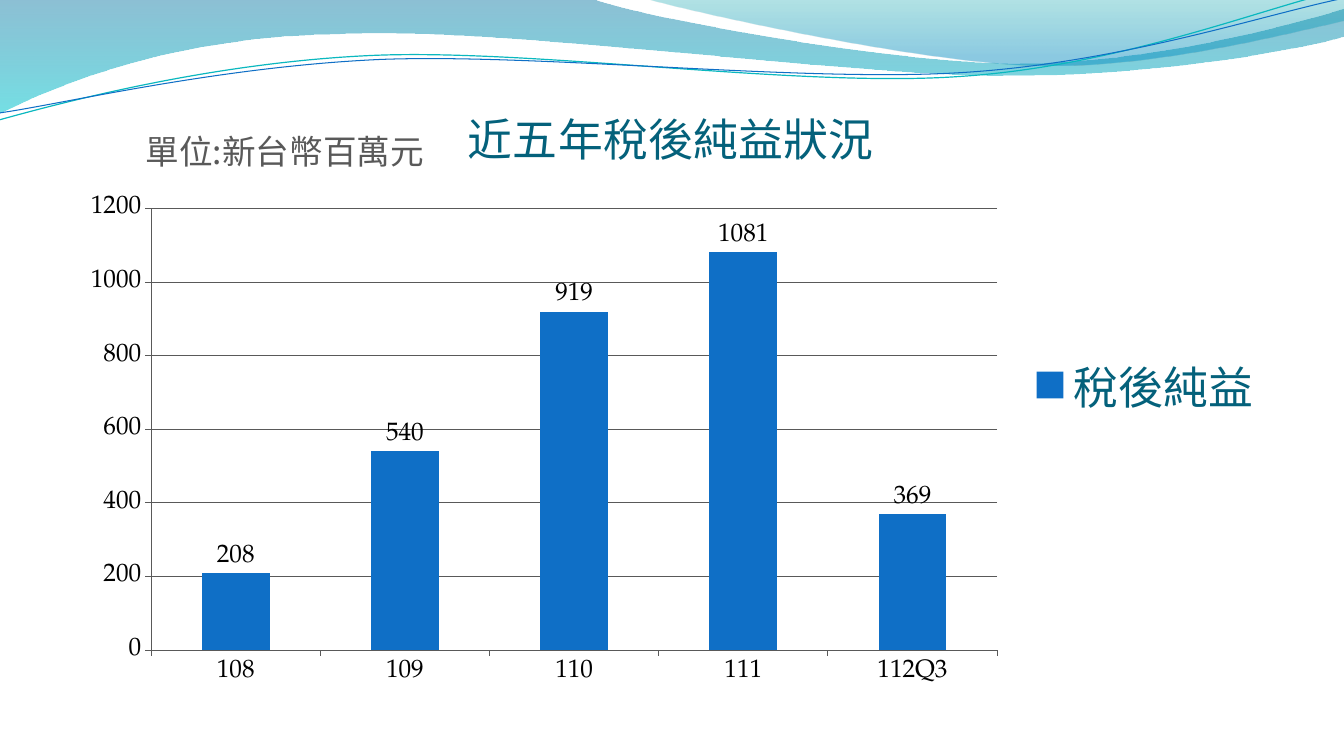
from lxml import etree
from pptx import Presentation
from pptx.chart.data import CategoryChartData
from pptx.dml.color import RGBColor
from pptx.enum.chart import (XL_CHART_TYPE, XL_LABEL_POSITION,
                             XL_LEGEND_POSITION, XL_TICK_MARK)
from pptx.enum.text import MSO_ANCHOR, PP_ALIGN
from pptx.oxml import parse_xml
from pptx.oxml.ns import nsdecls, qn
from pptx.util import Pt

COLUMN = XL_CHART_TYPE.COLUMN_CLUSTERED
ABOVE = XL_LABEL_POSITION.OUTSIDE_END
RIGHT = XL_LEGEND_POSITION.RIGHT
OUT = XL_TICK_MARK.OUTSIDE
CENTER = PP_ALIGN.CENTER
MIDDLE = MSO_ANCHOR.MIDDLE

SCALE = 9144  # 100 px to the inch
WIDE, HIGH = 1200, 619  # chart size in px

BLUE = RGBColor(0x0F, 0x6F, 0xC6)
AQUA = RGBColor(0x0A, 0xB8, 0xBF)
TEAL = RGBColor(0x04, 0x61, 0x7B)
GRAY = RGBColor(0x59, 0x59, 0x59)
BLACK = RGBColor(0, 0, 0)
DEEP = RGBColor(0x00, 0x74, 0xA1)
CYAN = RGBColor(0x00, 0xC6, 0xCF)
SEA = RGBColor(0x00, 0xA1, 0xA9)
SKY = RGBColor(0x00, 0x8B, 0xBF)

HAN = "Noto Sans CJK SC"
SERIF = "TeX Gyre Pagella"

# Each wave is a start point, then segments: one point for a line, three for a curve
WAVE = [(0, 0), [(587, -1)],
        [(634, 17), (885, 63), (1011, 63)], [(1138, 63), (1278, 26), (1333, 9)],
        [(1335, 36)],
        [(1311, 44), (1160, 76), (994, 75)], [(829, 75), (509, 28), (343, 34)],
        [(172, 36), (61, 83), (-1, 113)]]
CREST = [(639, -1), [(679, 11), (909, 62), (1025, 65)],
         [(1141, 69), (1282, 32), (1333, 21)], [(1333, 0)]]
UPPER = [(-1, 119), [(64, 101), (211, 62), (369, 55)],
         [(527, 48), (790, 87), (950, 76)], [(1110, 66), (1252, 8), (1331, -10)]]
LOWER = [(0, 112), [(63, 103), (218, 66), (378, 59)],
         [(537, 53), (796, 82), (955, 72)], [(1115, 62), (1255, 14), (1334, -2)]]

PROFIT = {"108": 208, "109": 540, "110": 919, "111": 1081, "112Q3": 369}


def px(n):
    return n * SCALE


def add_free(slide, wave, close):
    """Draw the points as lines, then join each three into a curve."""
    start, *segs = wave
    form = slide.shapes.build_freeform(*start, scale=SCALE)
    form.add_line_segments([dot for seg in segs for dot in seg], close=close)
    shape = form.convert_to_shape()
    shape.shadow.inherit = False
    lines = iter(list(shape._element.iter(qn("a:lnTo"))))
    for seg in segs:
        group = [next(lines) for _ in seg]
        if len(group) == 3:
            curve = etree.Element(qn("a:cubicBezTo"))
            group[0].addprevious(curve)
            for line in group:
                curve.append(line[0])
                line.getparent().remove(line)
    return shape


def add_wave(slide, wave, stops):
    """A closed shape with a see-through gradient from top to bottom."""
    shape = add_free(slide, wave, True)
    shape.line.fill.background()
    shape.fill.gradient()
    shape.fill.gradient_angle = 270
    for stop, (pos, color, _) in zip(shape.fill.gradient_stops, stops):
        stop.position = pos
        stop.color.rgb = color
    tints = shape._element.spPr.iter(qn("a:srgbClr"))
    for tint, (_, _, alpha) in zip(tints, stops):
        etree.SubElement(tint, qn("a:alpha"), val=str(alpha * 1000))


def add_line(slide, wave, color, width):
    shape = add_free(slide, wave, False)
    shape.fill.background()
    shape.line.color.rgb = color
    shape.line.width = Pt(width)


def set_font(font, name, size, color):
    font.name, font.size, font.bold = name, Pt(size), False
    font.color.rgb = color


def set_asian(root):
    """Use each Latin font for Chinese text as well."""
    for latin in list(root.iter(qn("a:latin"))):
        ea = etree.Element(qn("a:ea"), typeface=latin.get("typeface"))
        latin.addnext(ea)


def place(part, lead, inner=False, **box):
    """Place a chart part, in px from the chart's corner, after the lead child."""
    target = '<c:layoutTarget val="inner"/>' if inner else ""
    modes = "".join(f'<c:{k}Mode val="edge"/>' for k in "xy")
    sizes = "".join(f'<c:{k} val="{v / (WIDE if k in "xw" else HIGH)}"/>'
                    for k, v in box.items())
    for old in part.findall(qn("c:layout")):
        part.remove(old)
    layout = parse_xml(f'<c:layout {nsdecls("c")}><c:manualLayout>{target}{modes}'
                       f'{sizes}</c:manualLayout></c:layout>')
    if lead:
        part.find(qn(lead)).addnext(layout)
    else:
        part.insert(0, layout)


def add_chart(slide):
    data = CategoryChartData()
    data.categories = list(PROFIT)
    data.add_series("稅後純益", list(PROFIT.values()))
    chart = slide.shapes.add_chart(COLUMN, px(67), px(73), px(WIDE), px(HIGH),
                                   data).chart
    set_font(chart.font, SERIF, 18, BLACK)

    # Title and legend
    frame = chart.chart_title.text_frame
    frame.text = "近五年稅後純益狀況"
    set_font(frame.paragraphs[0].font, HAN, 32, TEAL)
    chart.has_legend = True
    legend = chart.legend
    legend.position = RIGHT
    legend.include_in_layout = False
    set_font(legend.font, HAN, 32, TEAL)

    # Axes
    for axis in (chart.category_axis, chart.value_axis):
        axis.major_tick_mark = OUT
        axis.format.line.color.rgb = GRAY
        axis.format.line.width = Pt(0.75)
    scale = chart.value_axis
    scale.minimum_scale, scale.maximum_scale, scale.major_unit = 0, 1200, 200
    scale.has_major_gridlines = True
    scale.major_gridlines.format.line.color.rgb = GRAY
    scale.major_gridlines.format.line.width = Pt(0.75)

    # Columns and labels
    plot = chart.plots[0]
    plot.gap_width = 150
    plot.vary_by_categories = False
    fill = plot.series[0].format.fill
    fill.solid()
    fill.fore_color.rgb = BLUE
    plot.has_data_labels = True
    plot.data_labels.show_value = True
    plot.data_labels.position = ABOVE

    # Places of the parts
    root = chart._chartSpace
    place(root.find(".//" + qn("c:title")), "c:tx", x=389, y=17)
    place(root.find(".//" + qn("c:legend")), "c:legendPos",
          x=949, y=275, w=240, h=68)
    place(root.find(".//" + qn("c:plotArea")), None, True,
          x=83, y=134, w=839, h=438)
    set_asian(root)


def add_text(slide, text, x, y, w, h):
    box = slide.shapes.add_textbox(px(x), px(y), px(w), px(h))
    frame = box.text_frame
    frame.word_wrap = True
    frame.vertical_anchor = MIDDLE
    frame.text = text
    para = frame.paragraphs[0]
    para.alignment = CENTER
    set_font(para.font, HAN, 24, GRAY)
    set_asian(box._element)


def main():
    deck = Presentation()
    deck.slide_width, deck.slide_height = px(1333), px(750)
    slide = deck.slides.add_slide(deck.slide_layouts[6])

    # Waves along the top
    add_wave(slide, WAVE, [(0, DEEP, 45), (1, CYAN, 55)])
    add_wave(slide, CREST, [(0, SEA, 30), (0.8, SKY, 45)])
    add_line(slide, UPPER, AQUA, 0.85)
    add_line(slide, LOWER, BLUE, 0.75)

    # Profit chart and its unit
    add_chart(slide)
    add_text(slide, "單位:新台幣百萬元", 122, 126, 321, 48)

    deck.save("out.pptx")


if __name__ == "__main__":
    main()
